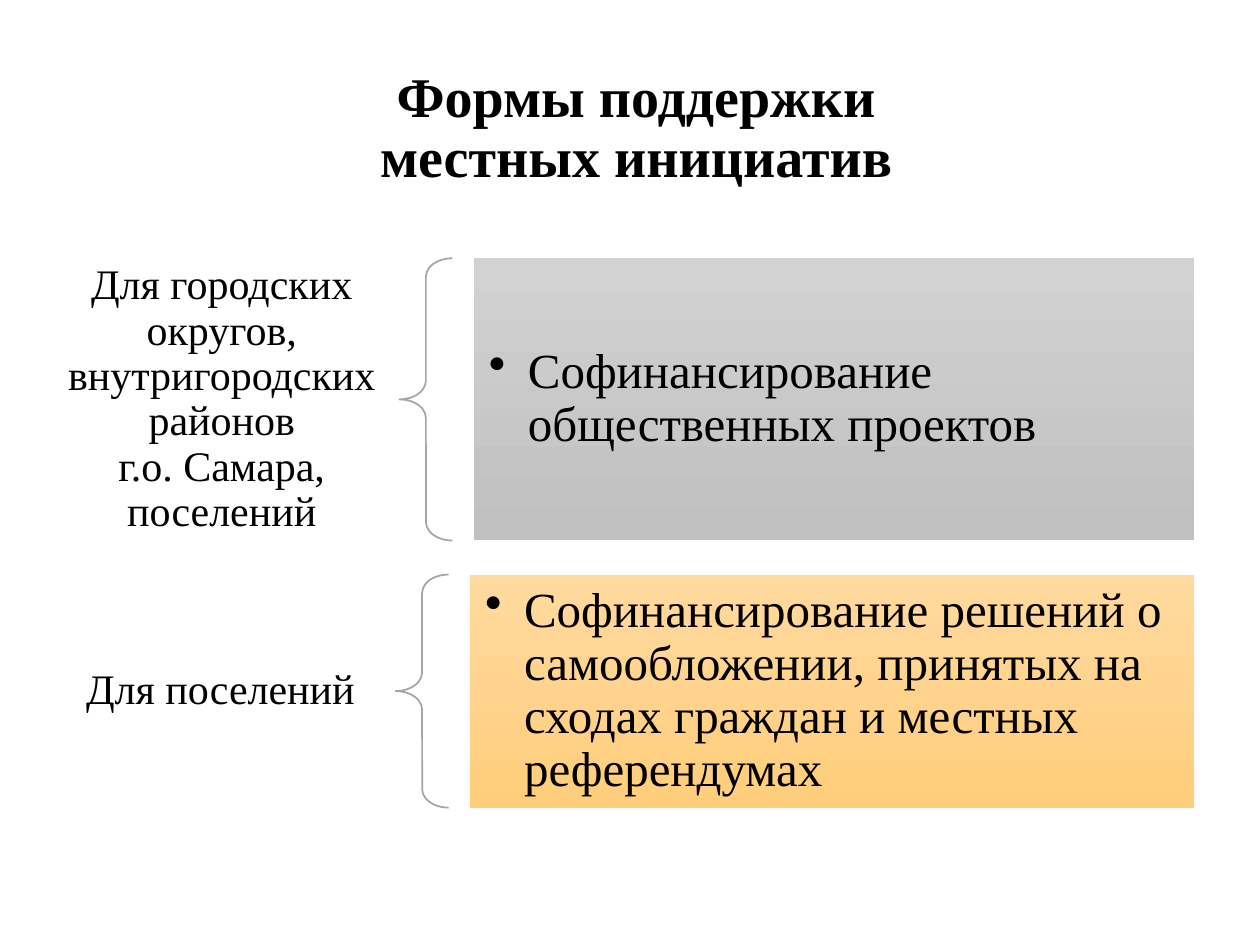
from dataclasses import dataclass

from lxml import etree
from pptx import Presentation
from pptx.dml.color import RGBColor
from pptx.enum import shapes, text
from pptx.oxml.ns import qn
from pptx.util import Inches, Pt


@dataclass(frozen=True)
class Theme:
    font: str = "Times New Roman"
    ink: str = "000000"
    brace: str = "A5A5A5"
    gray: tuple = ("D2D2D2", "C0C0C0")
    amber: tuple = ("FFD99E", "FFCE7C")
    title_size: int = 32
    label_size: int = 24
    body_size: int = 28


THEME = Theme()
BRACE_WIDTH = 0.42
BRACE_GAP = 0.17

# label, label box, top and height of the row, left of the brace, bar text, colours
ROWS = [
    ("Для городских округов, внутригородских районов\vг.о. Самара, поселений",
     (0.35, 2.04, 2.82, 2.26), (2.05, 2.24), 3.17,
     "Софинансирование общественных проектов", THEME.gray),
    ("Для поселений",
     (0.35, 4.78, 2.8, 1.41), (4.56, 1.85), 3.14,
     "Софинансирование решений о самообложении, принятых на сходах граждан "
     "и местных референдумах", THEME.amber),
]
BAR_RIGHT = 9.48


def set_attrs(obj, values):
    for name, value in values.items():
        setattr(obj, name, value)


def write(sp, content, size, align, inset, bold=False, bullet_indent=0):
    tf = sp.text_frame
    set_attrs(tf, {"word_wrap": True, "auto_size": text.MSO_AUTO_SIZE.NONE,
                   "vertical_anchor": text.MSO_ANCHOR.MIDDLE,
                   "margin_left": Inches(inset[0]), "margin_right": Inches(inset[0]),
                   "margin_top": Inches(inset[1]), "margin_bottom": Inches(inset[1])})
    tf.text = content
    p = tf.paragraphs[0]
    set_attrs(p, {"alignment": align, "line_spacing": 0.9})
    if bullet_indent:
        pPr = p._p.get_or_add_pPr()
        pPr.set("marL", str(Inches(bullet_indent)))
        pPr.set("indent", str(-Inches(bullet_indent)))
        etree.SubElement(pPr, qn("a:buChar")).set("char", "•")
    for r in p.runs:
        set_attrs(r.font, {"name": THEME.font, "size": Pt(size), "bold": bold})
        r.font.color.rgb = RGBColor.from_string(THEME.ink)


def add_title(s, box, content):
    title = s.shapes.title
    set_attrs(title, dict(zip(("left", "top", "width", "height"), map(Inches, box))))
    write(title, content, THEME.title_size, text.PP_ALIGN.CENTER, (0.1, 0.05), bold=True)


def add_label(s, box, content):
    label = s.shapes.add_textbox(*map(Inches, box))
    write(label, content, THEME.label_size, text.PP_ALIGN.CENTER, (0.17, 0.07))


def add_brace(s, box):
    brace = s.shapes.add_shape(shapes.MSO_SHAPE.LEFT_BRACE, *map(Inches, box))
    brace.shadow.inherit = False
    brace.adjustments[0] = 0.35
    brace.adjustments[1] = 0.5
    brace.fill.background()
    brace.line.color.rgb = RGBColor.from_string(THEME.brace)
    brace.line.width = Pt(1)


def add_bar(s, box, content, colors):
    """Rectangle shaded from top to bottom, holding one bulleted line."""
    bar = s.shapes.add_shape(shapes.MSO_SHAPE.RECTANGLE, *map(Inches, box))
    bar.shadow.inherit = False
    bar.line.fill.background()
    bar.fill.gradient()
    bar.fill.gradient_angle = 270
    for stop, color, position in zip(bar.fill.gradient_stops, colors, (0, 1)):
        stop.color.rgb = RGBColor.from_string(color)
        stop.position = position
    write(bar, content, THEME.body_size, text.PP_ALIGN.LEFT, (0.12, 0.12),
          bullet_indent=0.31)


def add_row(s, label, label_box, span, brace_left, content, colors):
    top, height = span
    bar_left = brace_left + BRACE_WIDTH + BRACE_GAP
    add_label(s, label_box, label)
    add_brace(s, (brace_left, top, BRACE_WIDTH, height))
    add_bar(s, (bar_left, top, BAR_RIGHT - bar_left, height), content, colors)


def main():
    prs = Presentation()
    set_attrs(prs, {"slide_width": Inches(10), "slide_height": Inches(7.5)})
    s = prs.slides.add_slide(prs.slide_layouts[5])
    add_title(s, (1.54, 0.48, 7.02, 1.09), "Формы поддержки\vместных инициатив")
    for row in ROWS:
        add_row(s, *row)
    prs.save("out.pptx")


if __name__ == "__main__":
    main()
